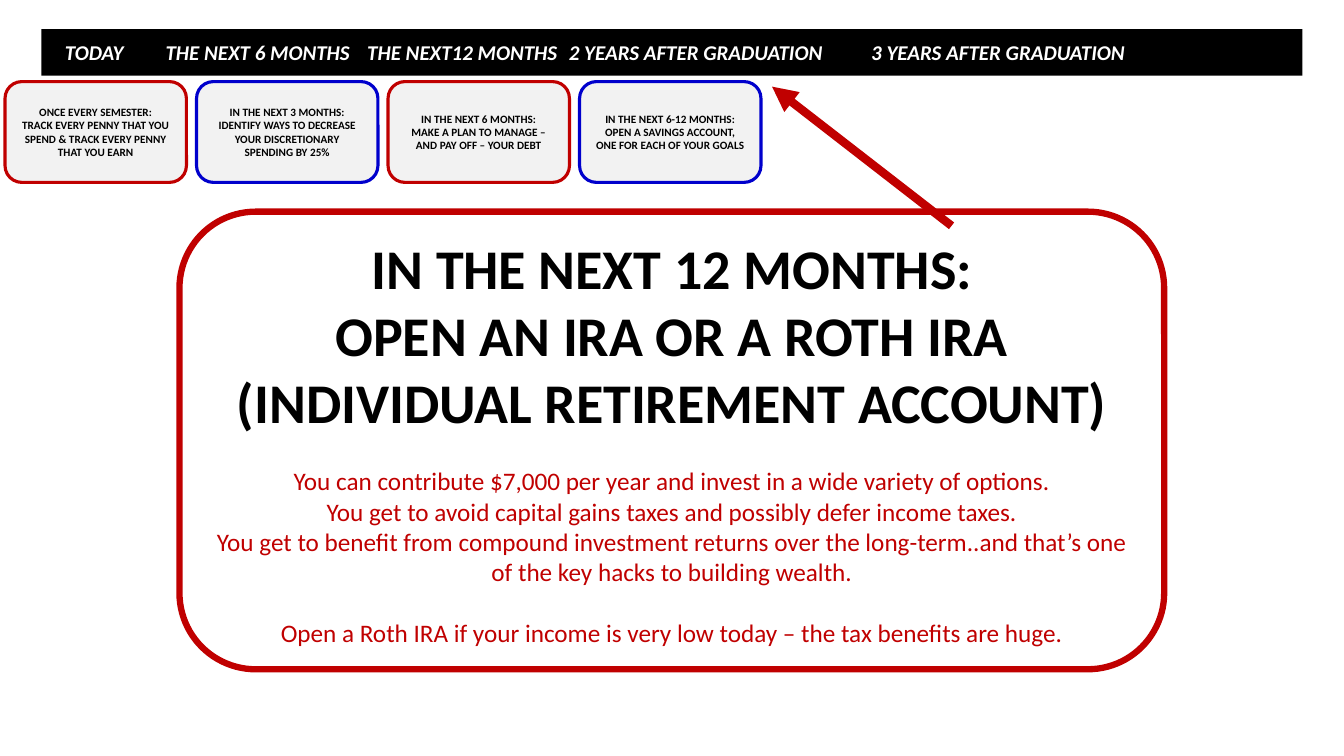
from lxml.etree import SubElement
from pptx import Presentation
from pptx.dml.color import RGBColor
from pptx.enum.shapes import MSO_CONNECTOR as Connector, MSO_SHAPE as Shape
from pptx.enum.text import MSO_ANCHOR as Anchor, PP_ALIGN as Align
from pptx.oxml.ns import qn
from pptx.util import Pt

FONT = "Calibri"
RED, BLUE, BLACK, WHITE, GREY = "C00000", "0000CC", "000000", "FFFFFF", "F2F2F2"

TIMELINE = [
    ("TODAY", 9.7),
    ("THE NEXT 6 MONTHS", 95.4),
    ("THE NEXT12 MONTHS", 301.2),
    ("2 YEARS AFTER GRADUATION", 475.4),
    ("3 YEARS AFTER GRADUATION", 695.4),
]
STEPS = [
    ("ONCE EVERY SEMESTER:",
     "TRACK EVERY PENNY THAT YOU SPEND & TRACK EVERY PENNY THAT YOU EARN"),
    ("IN THE NEXT 3 MONTHS:",
     "IDENTIFY WAYS TO DECREASE YOUR DISCRETIONARY SPENDING BY 25%"),
    ("IN THE NEXT 6 MONTHS:",
     "MAKE A PLAN TO MANAGE – AND PAY OFF – YOUR DEBT"),
    ("IN THE NEXT 6-12 MONTHS:",
     "OPEN A SAVINGS ACCOUNT, ONE FOR EACH OF YOUR GOALS"),
]
GOAL = [
    "IN THE NEXT 12 MONTHS:",
    "OPEN AN IRA OR A ROTH IRA (INDIVIDUAL RETIREMENT ACCOUNT)",
]
REASONS = [
    "You can contribute $7,000 per year and invest in a wide variety of options.",
    "You get to avoid capital gains taxes and possibly defer income taxes.",
    "You get to benefit from compound investment returns over the long-term.."
    "and that’s one of the key hacks to building wealth.",
]
ADVICE = "Open a Roth IRA if your income is very low today – the tax benefits are huge."

BAR = (29.5, 20.9, 900.7, 33.1)
STEP_LEFT, STEP_TOP, STEP_WIDTH, STEP_HEIGHT, STEP_PITCH = 3.6, 58.3, 129.6, 72, 136.8
CARD = (128.2, 151.2, 703.4, 326.9)
ARROW = (679.7, 161.3, 551.5, 61.9)
REASON_GAP = 22


def color(value):
    return RGBColor.from_string(value)


def add_panel(kind, place, fill=None, outline=None, weight=0):
    panel = slide.shapes.add_shape(kind, *map(Pt, place))
    panel.shadow.inherit = False
    if fill:
        panel.fill.solid()
        panel.fill.fore_color.rgb = color(fill)
    else:
        panel.fill.background()
    if outline:
        panel.line.color.rgb = color(outline)
        panel.line.width = Pt(weight)
    else:
        panel.line.fill.background()
    panel.text_frame.word_wrap = True
    panel.text_frame.vertical_anchor = Anchor.MIDDLE
    return panel.text_frame


def add_run(paragraph, text, size, ink, bold=False, italic=False):
    run = paragraph.add_run()
    run.text = text
    run.font.name = FONT
    run.font.size = Pt(size)
    run.font.bold = bold
    run.font.italic = italic
    run.font.color.rgb = color(ink)


def add_lines(frame, lines):
    for index, (text, size, ink, bold, gap) in enumerate(lines):
        paragraph = frame.add_paragraph() if index else frame.paragraphs[0]
        paragraph.alignment = Align.CENTER
        paragraph.space_before = Pt(gap)
        add_run(paragraph, text, size, ink, bold)


def add_timeline():
    periods = add_panel(Shape.RECTANGLE, BAR, BLACK).paragraphs[0]
    periods.alignment = Align.LEFT
    settings = periods._p.get_or_add_pPr()
    settings.set("marL", str(Pt(TIMELINE[0][1])))
    settings.set("indent", "0")
    stops = SubElement(settings, qn("a:tabLst"))
    for _, start in TIMELINE[1:]:
        SubElement(stops, qn("a:tab"), pos=str(Pt(start)), algn="l")
    for index, (period, _) in enumerate(TIMELINE):
        add_run(periods, "\t" + period if index else period, 15, WHITE, True, True)


def add_steps():
    for index, step in enumerate(STEPS):
        place = (STEP_LEFT + index * STEP_PITCH, STEP_TOP, STEP_WIDTH, STEP_HEIGHT)
        frame = add_panel(Shape.ROUNDED_RECTANGLE, place, GREY, (RED, BLUE)[index % 2], 2.25)
        add_lines(frame, [(text, 8, BLACK, True, 0) for text in step])


def add_arrow():
    arrow = slide.shapes.add_connector(Connector.STRAIGHT, *map(Pt, ARROW))
    arrow.line.color.rgb = color(RED)
    arrow.line.width = Pt(6)
    SubElement(arrow.line._get_or_add_ln(), qn("a:tailEnd"), type="triangle")
    SubElement(arrow._element.spPr, qn("a:effectLst"))


def add_goal():
    frame = add_panel(Shape.ROUNDED_RECTANGLE, CARD, None, RED, 4.5)
    lines = [(text, 40, BLACK, True, 0) for text in GOAL]
    lines += [(text, 18, RED, False, 0 if index else REASON_GAP)
              for index, text in enumerate(REASONS)]
    lines.append((ADVICE, 18, RED, False, REASON_GAP))
    add_lines(frame, lines)


deck = Presentation()
deck.slide_width, deck.slide_height = Pt(960), Pt(540)
slide = deck.slides.add_slide(deck.slide_layouts[6])
add_timeline()
add_steps()
add_arrow()
add_goal()
deck.save("out.pptx")
